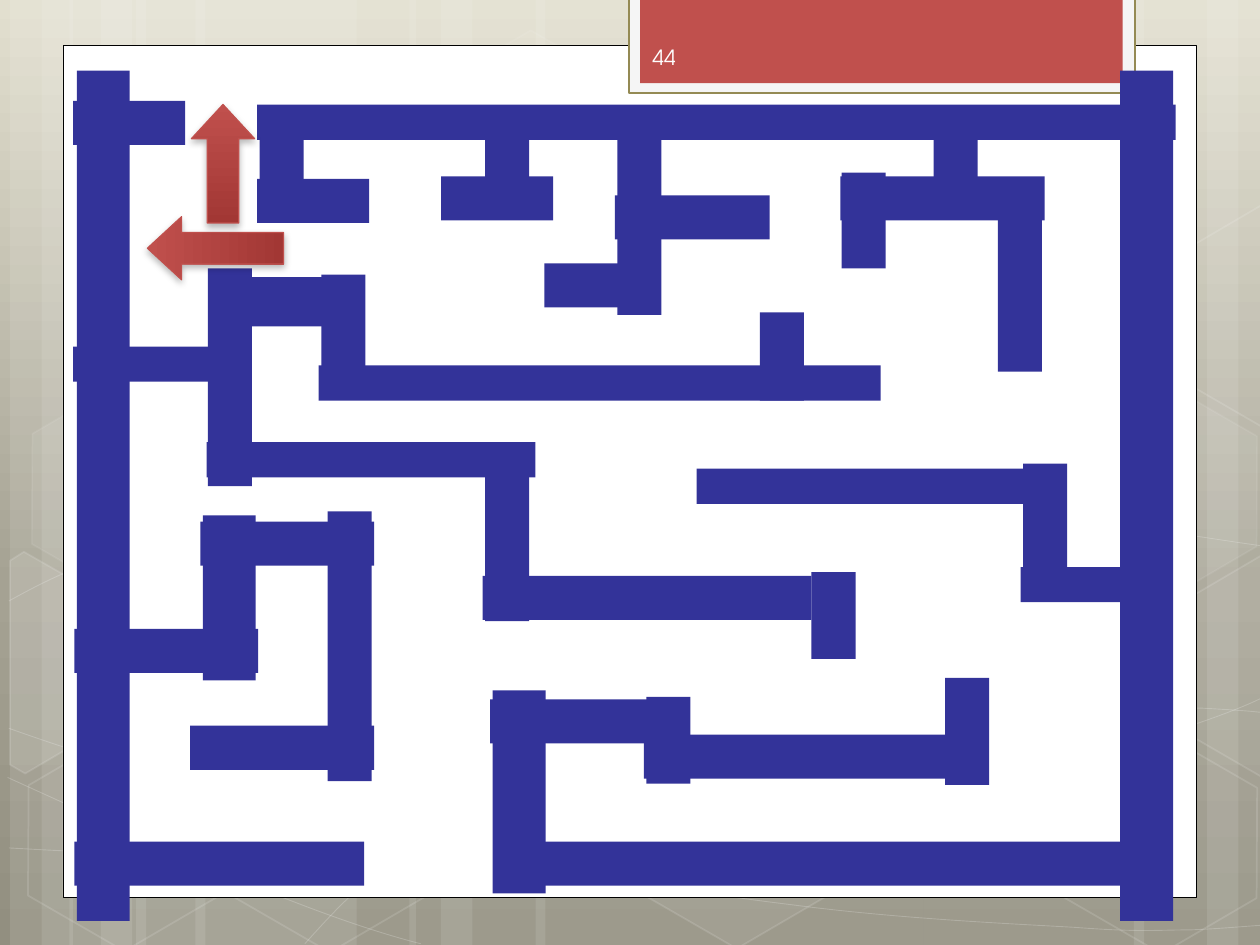
import copy

import pptx
import pptx.dml.color
import pptx.enum.shapes
import pptx.enum.text
import pptx.oxml.ns
import pptx.util
from lxml import etree

RGB = pptx.dml.color.RGBColor
KIND = pptx.enum.shapes.MSO_SHAPE
qn = pptx.oxml.ns.qn

SCALE = 9144  # EMU per px, 100 px to the inch
WHITE = RGB(0xFF, 0xFF, 0xFF)
BLACK = RGB(0x00, 0x00, 0x00)
PALE = RGB(0xF5, 0xF5, 0xF5)
OLIVE = RGB(0x94, 0x8A, 0x54)
RED = RGB(0xC0, 0x50, 0x4D)
DARK = RGB(0xA2, 0x37, 0x34)
NAVY = RGB(0x33, 0x33, 0x99)
INK = RGB(0xFE, 0xFE, 0xFE)
SKY = [(0, RGB(0xE2, 0xDF, 0xCF)), (0.62, RGB(0xA5, 0xA2, 0x93)), (1, RGB(0x92, 0x8F, 0x80))]
FONT = "TeX Gyre Adventor"

# left, width
BANDS = [(108, 175), (8, 50), (33, 83), (155, 175), (55, 50), (80, 83),
         (733, 175), (958, 50), (900, 83), (425, 308), (325, 50), (350, 83)]

# start point, then two controls and an end for each curve
CURVES = [
    [(7, 673), (61, 676), (115, 679), (190, 678), (265, 677), (358, 675), (458, 665),
     (558, 655), (700, 636), (792, 617), (883, 598), (977, 568), (1007, 551)],
    [(7, 477), (36, 461), (65, 446), (121, 431), (178, 416), (259, 394), (347, 387),
     (436, 380), (544, 379), (654, 387), (764, 395), (947, 426), (1007, 434)],
    [(6, 617), (127, 672), (247, 727), (334, 749)],
    [(7, 578), (38, 589), (70, 600), (128, 616), (186, 631), (273, 656), (357, 673),
     (440, 690), (545, 708), (628, 718), (711, 729), (800, 733), (853, 736), (905, 740),
     (919, 738), (945, 738), (971, 737), (989, 735), (1007, 734)],
    [(242, 749), (260, 729), (278, 709), (302, 691), (326, 673), (360, 653), (388, 639),
     (416, 625), (433, 619), (470, 609), (506, 599), (573, 585), (608, 578), (644, 571),
     (649, 571), (680, 569), (711, 566), (760, 563), (794, 562), (829, 561), (886, 562),
     (886, 562), (886, 562), (953, 562), (953, 562), (971, 563), (988, 564), (997, 565),
     (1006, 566), (1003, 565), (1006, 566)],
]

# left, top, fill alpha, line alpha
CELLS = [(334, 36, 4, 8), (497, 589, 6, 12), (11, 591, 0, 12), (14, 312, 7, 8),
         (174, 592, 0, 12), (753, 453, 10, 12), (834, 593, 0, 12), (834, 314, 7, 8)]

# fill alpha, points
PARTS = [
    (10, [(8, 445), (19, 438), (96, 482), (95, 570), (20, 614), (8, 607)]),
    (4, [(926, 485), (1001, 441), (1009, 446), (1009, 613), (1002, 617), (926, 573)]),
    (0, [(926, 207), (1001, 163), (1010, 168), (1009, 335), (1002, 339), (926, 295)]),
]

# thickness: left, top, length
ACROSS = {
    35: [(59, 668, 230), (383, 457, 261), (59, 499, 146), (159, 414, 138), (667, 140, 162),
         (151, 576, 146), (389, 555, 153), (412, 668, 514), (432, 209, 89), (511, 583, 261),
         (488, 155, 123), (350, 140, 89), (204, 142, 89), (58, 80, 89)],
    28: [(253, 290, 446), (553, 372, 276), (204, 83, 729), (58, 275, 138), (164, 351, 261),
         (810, 450, 115)],
    39: [(174, 220, 112)],
}
DOWN = {
    35: [(644, 454, 69), (750, 538, 85), (668, 137, 76), (255, 218, 97), (165, 213, 173),
         (385, 367, 126), (260, 406, 214), (206, 92, 69), (741, 92, 65), (792, 156, 139),
         (513, 553, 69), (812, 368, 99), (603, 248, 70), (490, 96, 154), (385, 106, 65)],
    42: [(889, 56, 675), (61, 56, 675), (161, 409, 131), (391, 548, 161)],
}


def px(num):
    return pptx.util.Emu(num * SCALE)


def paint(shape, fill=None, line=None, weight=1.0, clear=100, faint=100):
    """Set fill and line; clear and faint are their alphas in percent."""
    shape.shadow.inherit = False
    if fill is None or clear == 0:
        shape.fill.background()
    else:
        shape.fill.solid()
        shape.fill.fore_color.rgb = fill
    if line is None:
        shape.line.fill.background()
    else:
        shape.line.color.rgb = line
        shape.line.width = pptx.util.Pt(weight)
    for route, alpha in (("", clear), ("a:ln/", faint)):
        if alpha < 100:
            for color in shape._element.spPr.xpath(route + "a:solidFill/a:srgbClr"):
                etree.SubElement(color, qn("a:alpha"), val=str(alpha * 1000))


def blend(fill, stops):
    """Fill from top to bottom through the stops."""
    fill.gradient()
    fill.gradient_angle = 270
    first = fill.gradient_stops[0]._gs
    for _ in stops[2:]:
        first.addnext(copy.deepcopy(first))
    for stop, (place, color) in zip(fill.gradient_stops, stops):
        stop.position = place
        stop.color.rgb = color


def add(shapes, kind, left, top, width, height):
    return shapes.add_shape(kind, px(left), px(top), px(width), px(height))


def box(shapes, left, top, width, height, **style):
    paint(add(shapes, KIND.RECTANGLE, left, top, width, height), **style)


def trace(shapes, points, close):
    form = shapes.build_freeform(*points[0], scale=SCALE)
    form.add_line_segments(points[1:], close=close)
    return form.convert_to_shape()


def curve(shapes, points):
    """Trace the points, then join each three lines into one curve."""
    shape = trace(shapes, points, False)
    lines = shape._element.xpath(".//a:lnTo")
    for i in range(0, len(lines), 3):
        bend = etree.Element(qn("a:cubicBezTo"))
        lines[i].addprevious(bend)
        for line in lines[i:i + 3]:
            bend.append(line[0])
            line.getparent().remove(line)
    paint(shape, line=WHITE, weight=0.5, faint=20)


def cell(shapes, left, top, clear, faint):
    shape = add(shapes, KIND.HEXAGON, left, top, 175, 152)
    shape.adjustments[0], shape.adjustments[1] = 0.285, 1.155
    shape.rotation = 30
    paint(shape, WHITE, WHITE, clear=clear, faint=faint)


def arrow(shapes, left, top, height, turn):
    shape = add(shapes, KIND.UP_ARROW, left, top, 50, height)
    shape.adjustments[0], shape.adjustments[1] = 0.5, 0.542
    shape.rotation = turn
    paint(shape, line=RED, weight=0.75)
    blend(shape.fill, [(0, RED), (1, DARK)])
    shade = etree.SubElement(
        shape._element.spPr.find(qn("a:effectLst")), qn("a:outerShdw"), dir="5400000",
        blurRad=str(pptx.util.Pt(4)), dist=str(pptx.util.Pt(2)), rotWithShape="0")
    color = etree.SubElement(shade, qn("a:srgbClr"), val=str(BLACK))
    etree.SubElement(color, qn("a:alpha"), val="28000")


def label(shapes, text):
    frame = shapes.add_textbox(px(508), px(25), px(146), px(40)).text_frame
    frame.word_wrap = True
    frame.vertical_anchor = pptx.enum.text.MSO_ANCHOR.MIDDLE
    run = frame.paragraphs[0].add_run()
    run.text = text
    run.font.size, run.font.name = pptx.util.Pt(12), FONT
    run.font.color.rgb = INK


def scene(shapes):
    for left, width in BANDS:
        box(shapes, left, 0, width, 750, fill=WHITE, clear=10)
    for points in CURVES:
        curve(shapes, points)
    for row in CELLS:
        cell(shapes, *row)
    for clear, points in PARTS:
        paint(trace(shapes, points, True), WHITE, WHITE, clear=clear, faint=12)


def maze(shapes):
    for walls, flat in ((ACROSS, True), (DOWN, False)):
        for thick, rows in walls.items():
            for left, top, size in rows:
                width, height = (size, thick) if flat else (thick, size)
                box(shapes, left, top, width, height, fill=NAVY)


def main():
    deck = pptx.Presentation()
    deck.slide_width, deck.slide_height = px(1000), px(750)
    slide = deck.slides.add_slide(deck.slide_layouts[6])
    shapes = slide.shapes
    blend(slide.background.fill, SKY)
    scene(shapes.add_group_shape().shapes)
    box(shapes, 50, 36, 900, 676, fill=WHITE, line=BLACK, weight=0.5)
    box(shapes, 499, -2, 402, 76, fill=PALE, line=OLIVE, weight=1.25)
    box(shapes, 508, -2, 383, 68, fill=RED)
    label(shapes, "44")
    maze(shapes.add_group_shape().shapes)
    arrow(shapes, 146, 143, 108, 270)
    arrow(shapes, 152, 83, 94, 0)
    deck.save("out.pptx")


if __name__ == "__main__":
    main()
